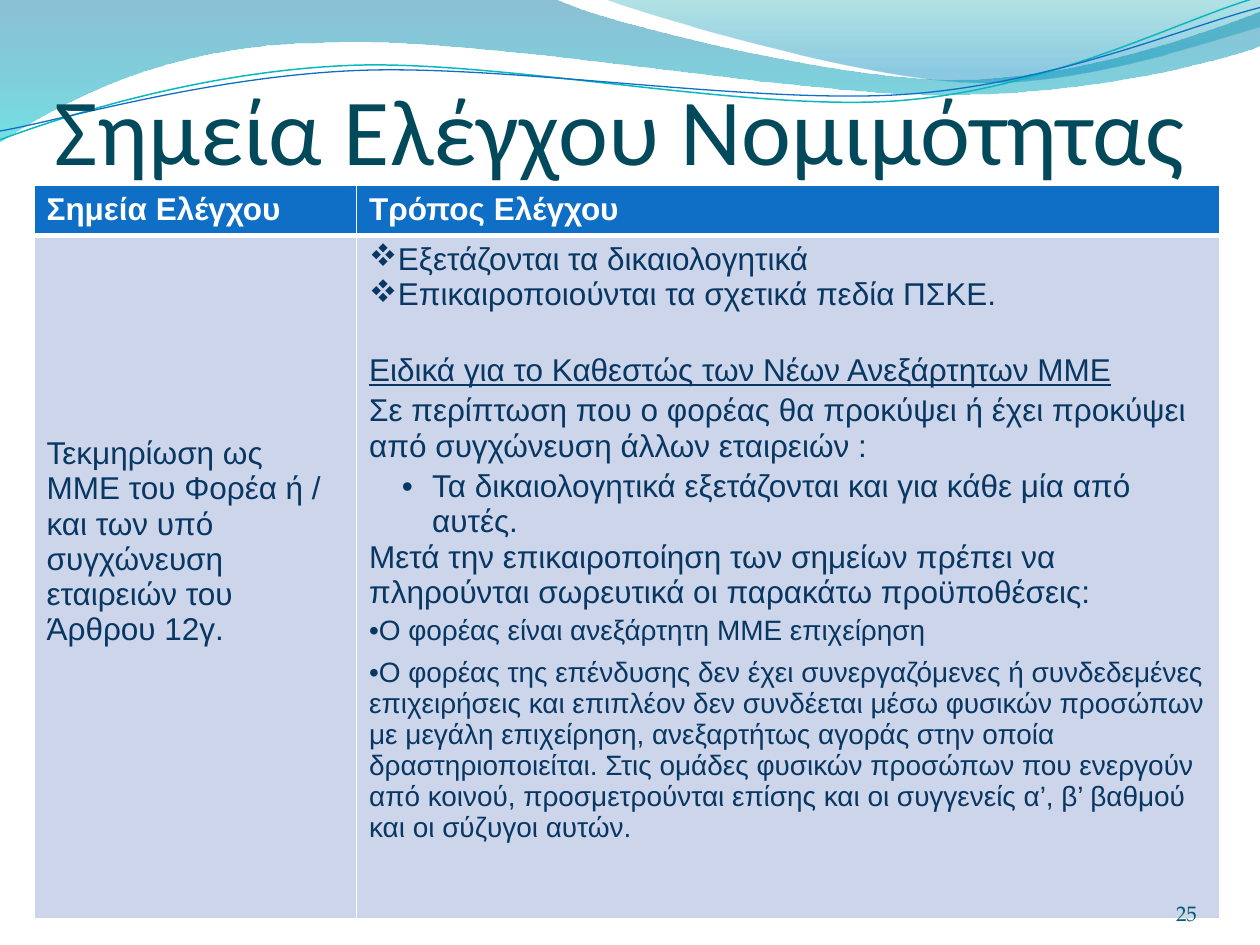
"""Build the slide on legality control points."""
from lxml.etree import SubElement
from pptx import Presentation
from pptx.dml.color import RGBColor
from pptx.enum.text import MSO_ANCHOR, PP_ALIGN
from pptx.oxml import parse_xml
from pptx.oxml.ns import nsdecls, qn
from pptx.util import Inches, Pt

HUES = {"title": "03495C", "head": "0F6FC6", "cell": "CCD5EA", "body": "083763",
        "white": "FFFFFF", "num": "045C75", "teal": "0AB8BF"}
BANDS = [
    ((0, -0.01), [[(4.4, -0.01)], [(4.76, 0.17), (6.64, 0.63), (7.58, 0.63)],
                  [(8.53, 0.63), (9.58, 0.26), (10, 0.09)], [(10.01, 0.36)],
                  [(9.83, 0.44), (8.7, 0.76), (7.46, 0.75)],
                  [(6.22, 0.75), (3.82, 0.28), (2.57, 0.34)],
                  [(1.29, 0.35), (0.46, 0.83), (-0.01, 1.13)], [(0, -0.01)]],
     [(0, "0074A1", 45), (100, "00C6CF", 55)]),
    ((4.79, -0.01), [[(5.09, 0.11), (6.82, 0.62), (7.69, 0.65)],
                     [(8.56, 0.69), (9.61, 0.32), (10, 0.21)], [(10, 0)],
                     [(4.79, -0.01)]],
     [(0, "00A1A9", 30), (80, "008BBF", 45)]),
]
CURVES = [
    ((0, 1.11), [[(0.48, 0.93), (1.58, 0.57), (2.77, 0.52)],
                 [(3.95, 0.47), (5.93, 0.89), (7.13, 0.8)],
                 [(8.33, 0.71), (9.38, 0.15), (9.98, -0.02)]], "teal", 0.85),
    ((0, 1.04), [[(0.47, 0.96), (1.64, 0.61), (2.83, 0.56)],
                 [(4.03, 0.51), (5.97, 0.83), (7.17, 0.75)],
                 [(8.36, 0.67), (9.41, 0.21), (10, 0.06)]], "head", 0.75),
]
LEFT = "Τεκμηρίωση ως ΜΜΕ του Φορέα ή / και των υπό συγχώνευση εταιρειών του Άρθρου 12γ."
GEM, DOT = ("Wingdings", "v"), ("Arial", "•")
RIGHT = [
    ("Εξετάζονται τα δικαιολογητικά", {"mark": GEM}),
    ("Επικαιροποιούνται τα σχετικά πεδία ΠΣΚΕ.", {"mark": GEM}),
    ("Ειδικά για το Καθεστώς των Νέων Ανεξάρτητων ΜΜΕ", {"above": 23, "under": True}),
    ("Σε περίπτωση που ο φορέας θα προκύψει ή έχει προκύψει από συγχώνευση "
     "άλλων εταιρειών :", {"above": 3}),
    ("Τα δικαιολογητικά εξετάζονται και για κάθε μία από αυτές.",
     {"above": 3, "mark": DOT, "left": 0.5, "hang": 0.24}),
    ("Μετά την επικαιροποίηση των σημείων πρέπει να πληρούνται σωρευτικά οι "
     "παρακάτω προϋποθέσεις:", {}),
    ("Ο φορέας είναι ανεξάρτητη ΜΜΕ επιχείρηση",
     {"above": 3, "below": 3, "mark": DOT, "size": 16}),
    ("Ο φορέας της επένδυσης δεν έχει συνεργαζόμενες ή συνδεδεμένες επιχειρήσεις "
     "και επιπλέον δεν συνδέεται μέσω φυσικών προσώπων με μεγάλη επιχείρηση, "
     "ανεξαρτήτως αγοράς στην οποία δραστηριοποιείται. Στις ομάδες φυσικών "
     "προσώπων που ενεργούν από κοινού, προσμετρούνται επίσης και οι συγγενείς "
     "α’, β’ βαθμού και οι σύζυγοι αυτών.",
     {"above": 3, "below": 3, "mark": DOT, "size": 16}),
]


def hue(name):
    return RGBColor.from_string(HUES[name])


def add_path(slide, start, parts, close):
    """Draw an outline, with each part of three points as a cubic curve."""
    pen = slide.shapes.build_freeform(*map(Inches, start))
    pen.add_line_segments([(Inches(x), Inches(y)) for part in parts for x, y in part],
                          close=close)
    shape = pen.convert_to_shape()
    lines = iter(list(shape.element.iter(qn("a:lnTo"))))
    for part in parts:
        group = [next(lines) for point in part]
        if len(group) == 3:
            group[0].tag = qn("a:cubicBezTo")
            for line in group[1:]:
                group[0].append(line[0])
                line.getparent().remove(line)
    shape.shadow.inherit = False
    shape.fill.background()
    return shape


def add_band(slide, start, parts, stops):
    shape = add_path(slide, start, parts, True)
    shape.line.fill.background()
    marks = "".join(
        f'<a:gs pos="{pos * 1000}"><a:srgbClr val="{tint}">'
        f'<a:alpha val="{alpha * 1000}"/></a:srgbClr></a:gs>'
        for pos, tint, alpha in stops)
    grad = parse_xml(f'<a:gradFill {nsdecls("a")} rotWithShape="1"><a:gsLst>{marks}'
                     '</a:gsLst><a:lin ang="5400000" scaled="0"/></a:gradFill>')
    old = shape.element.spPr.find(qn("a:noFill"))
    old.getparent().replace(old, grad)


def add_curve(slide, start, parts, tint, width):
    shape = add_path(slide, start, parts, False)
    shape.line.color.rgb = hue(tint)
    shape.line.width = Pt(width)


def style(para, face, size, tint, bold=False):
    font = para.font
    font.name, font.size, font.bold = face, Pt(size), bold
    font.color.rgb = hue(tint)


def set_title(slide):
    title = slide.shapes.title
    title.element.getparent().append(title.element)
    title.left, title.top, title.width, title.height = map(Inches, (0.43, 0.84, 9, 0.62))
    frame = title.text_frame
    frame.text = "Σημεία Ελέγχου Νομιμότητας"
    frame.vertical_anchor = MSO_ANCHOR.BOTTOM
    frame.margin_left = frame.margin_right = frame.margin_bottom = 0
    para = frame.paragraphs[0]
    para.alignment = PP_ALIGN.LEFT
    style(para, "Calibri", 54, "title")


def write(para, text, mark=None, left=0, hang=0, above=0, below=0, size=18, under=None):
    para.text = text
    para.space_before, para.space_after = Pt(above), Pt(below)
    if mark:
        face, sign = mark
        props = para._p.get_or_add_pPr()
        props.set("marL", str(Inches(left)))
        props.set("indent", str(-Inches(hang)))
        SubElement(props, qn("a:buFont")).set("typeface", face)
        SubElement(props, qn("a:buChar")).set("char", sign)
    style(para, "Arial", size, "body")
    para.font.underline = under


def paint(cell, fill, top, base):
    """Give a cell white borders and a solid fill."""
    props = cell._tc.get_or_add_tcPr()
    for side, width in zip("LRTB", (1, 1, top, base)):
        props.append(parse_xml(
            f'<a:ln{side} {nsdecls("a")} w="{Pt(width)}"><a:solidFill>'
            f'<a:srgbClr val="{HUES["white"]}"/></a:solidFill></a:ln{side}>'))
    cell.fill.solid()
    cell.fill.fore_color.rgb = hue(fill)


def add_grid(slide):
    box = map(Inches, (0.27, 1.47, 9.41, 5.82))
    table = slide.shapes.add_table(2, 2, *box).table
    for col, width in zip(table.columns, (2.56, 6.85)):
        col.width = Inches(width)
    for row, height in zip(table.rows, (0.4, 5.42)):
        row.height = Inches(height)
    for col, text in enumerate(("Σημεία Ελέγχου", "Τρόπος Ελέγχου")):
        head = table.cell(0, col)
        head.text = text
        style(head.text_frame.paragraphs[0], "Arial", 18, "white", True)
        paint(head, "head", 1, 3)
        paint(table.cell(1, col), "cell", 3, 1)
    side = table.cell(1, 0)
    side.vertical_anchor = MSO_ANCHOR.MIDDLE
    side.margin_bottom = Inches(0.61)
    write(side.text_frame.paragraphs[0], LEFT)
    frame = table.cell(1, 1).text_frame
    for index, (text, look) in enumerate(RIGHT):
        para = frame.add_paragraph() if index else frame.paragraphs[0]
        write(para, text, **look)


def add_number(slide):
    box = slide.shapes.add_textbox(*map(Inches, (8.67, 6.95, 0.83, 0.4)))
    frame = box.text_frame
    frame.word_wrap = True
    frame.vertical_anchor = MSO_ANCHOR.BOTTOM
    frame.margin_left = frame.margin_right = frame.margin_top = frame.margin_bottom = 0
    para = frame.paragraphs[0]
    para.text = "25"
    para.alignment = PP_ALIGN.RIGHT
    style(para, "TeX Gyre Pagella", 12, "num")


def main():
    deck = Presentation()
    deck.slide_width, deck.slide_height = Inches(10), Inches(7.5)
    slide = deck.slides.add_slide(deck.slide_layouts[5])
    for band in BANDS:
        add_band(slide, *band)
    for curve in CURVES:
        add_curve(slide, *curve)
    set_title(slide)
    add_grid(slide)
    add_number(slide)
    deck.save("out.pptx")


if __name__ == "__main__":
    main()
